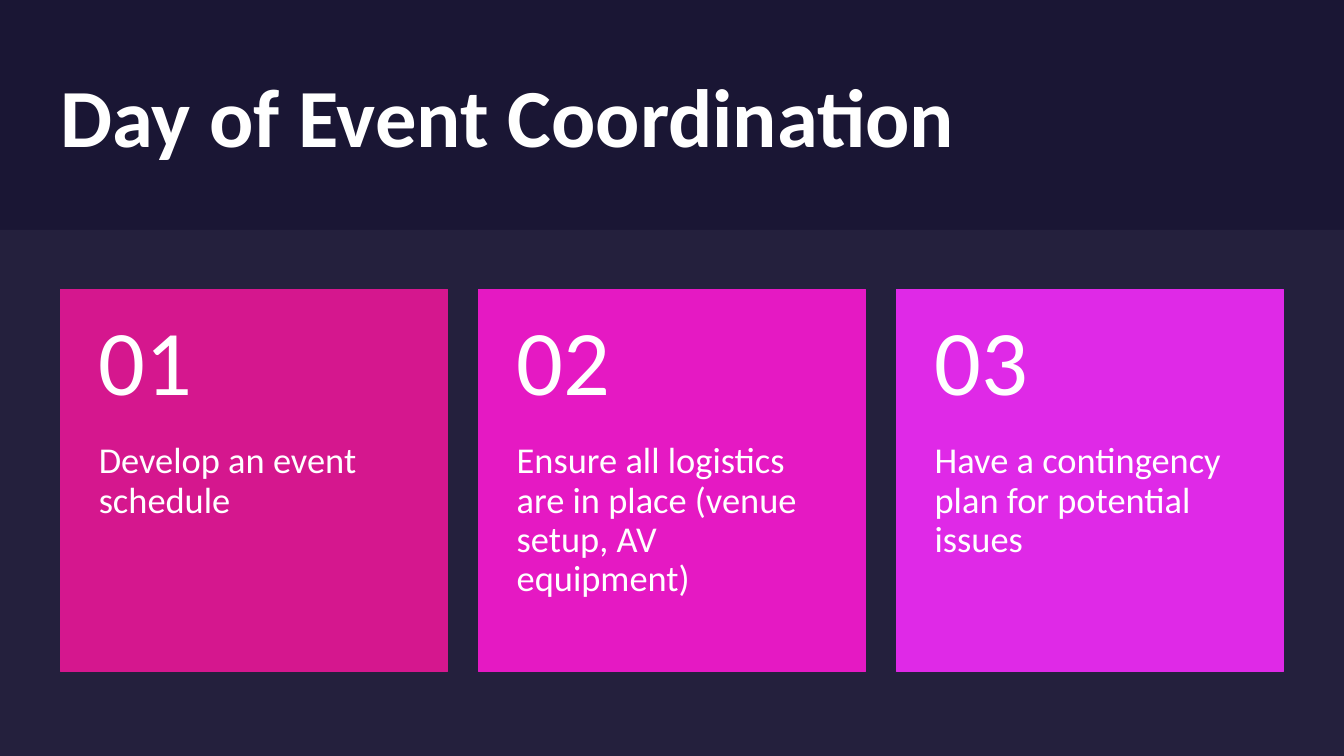
from dataclasses import dataclass

from lxml import etree
from pptx import Presentation
from pptx import util as u
from pptx.dml.color import RGBColor
from pptx.enum import shapes, text
from pptx.oxml import ns

NIGHT = RGBColor(0x1A, 0x16, 0x34)
MIST = RGBColor(0xE3, 0xE0, 0xF2)
WHITE = RGBColor(0xFF, 0xFF, 0xFF)
ROSE = RGBColor(0xD5, 0x17, 0x8E)
PINK = RGBColor(0xE5, 0x19, 0xC3)
VIOLET = RGBColor(0xDF, 0x29, 0xE7)

FONT = "Calibri"
WIDTH, HEIGHT = 13.33, 7.5
LEFT, TOP = 0.6, 2.87
CARD_W, CARD_H = 3.84, 3.79
HEAD_H = 1.52
STEP = 4.145
PAD = 0.38


@dataclass(frozen=True)
class Card:
    label: str
    color: RGBColor


CARDS = [
    Card("Develop an event schedule", ROSE),
    Card("Ensure all logistics are in place (venue setup, AV equipment)", PINK),
    Card("Have a contingency plan for potential issues", VIOLET),
]


def add_rect(slide, left: float, top: float, width: float, height: float,
             color: RGBColor):
    rect = slide.shapes.add_shape(
        shapes.MSO_SHAPE.RECTANGLE, u.Inches(left), u.Inches(top),
        u.Inches(width), u.Inches(height))
    rect.shadow.inherit = False
    rect.fill.solid()
    rect.fill.fore_color.rgb = color
    rect.line.fill.background()
    return rect


def set_text(shape, words: str, size: int, anchor: text.MSO_ANCHOR,
             side: float = 0, top: float = 0, bottom: float = 0):
    """Fill a shape with one left-aligned white paragraph and return it."""
    frame = shape.text_frame
    frame.word_wrap = True
    frame.auto_size = text.MSO_AUTO_SIZE.NONE
    frame.vertical_anchor = anchor
    frame.margin_left = frame.margin_right = u.Inches(side)
    frame.margin_top, frame.margin_bottom = u.Inches(top), u.Inches(bottom)
    para = frame.paragraphs[0]
    para.text = words
    para.alignment = text.PP_ALIGN.LEFT
    para.line_spacing = 0.9
    para.font.name = FONT
    para.font.size = u.Pt(size)
    para.font.color.rgb = WHITE
    return para


def add_title(slide) -> None:
    title = slide.shapes.title
    title.left, title.top = u.Inches(LEFT), u.Inches(0.6)
    title.width, title.height = u.Inches(11.85), u.Inches(1.08)
    para = set_text(title, "Day of Event Coordination", 59,
                    text.MSO_ANCHOR.MIDDLE)
    para.line_spacing = 1.0
    para.font.bold = True


def add_panel(slide) -> None:
    """Lighten the lower part of the slide with a sheer panel."""
    panel = add_rect(slide, 0, 2.28, WIDTH, HEIGHT - 2.28, MIST)
    tint = panel.fill._xPr.find(".//" + ns.qn("a:srgbClr"))
    etree.SubElement(tint, ns.qn("a:alpha"), val="5000")


def add_card(slide, index: int, card: Card) -> None:
    left = LEFT + index * STEP
    rect = add_rect(slide, left, TOP, CARD_W, CARD_H, card.color)
    rect.line.color.rgb = card.color
    rect.line.width = u.Pt(1)

    body = slide.shapes.add_textbox(
        u.Inches(left), u.Inches(TOP + HEAD_H),
        u.Inches(CARD_W), u.Inches(CARD_H - HEAD_H))
    set_text(body, card.label, 26, text.MSO_ANCHOR.TOP, PAD, 0, 0.36)

    head = slide.shapes.add_textbox(
        u.Inches(left), u.Inches(TOP), u.Inches(CARD_W), u.Inches(HEAD_H))
    set_text(head, f"{index + 1:02}", 66, text.MSO_ANCHOR.MIDDLE,
             PAD, 0.18, 0.18)


def main() -> None:
    deck = Presentation()
    deck.slide_width, deck.slide_height = u.Inches(WIDTH), u.Inches(HEIGHT)
    slide = deck.slides.add_slide(deck.slide_layouts.get_by_name("Title Only"))
    slide.background.fill.solid()
    slide.background.fill.fore_color.rgb = NIGHT
    add_title(slide)
    add_panel(slide)
    for index, card in enumerate(CARDS):
        add_card(slide, index, card)
    deck.save("out.pptx")


if __name__ == "__main__":
    main()
